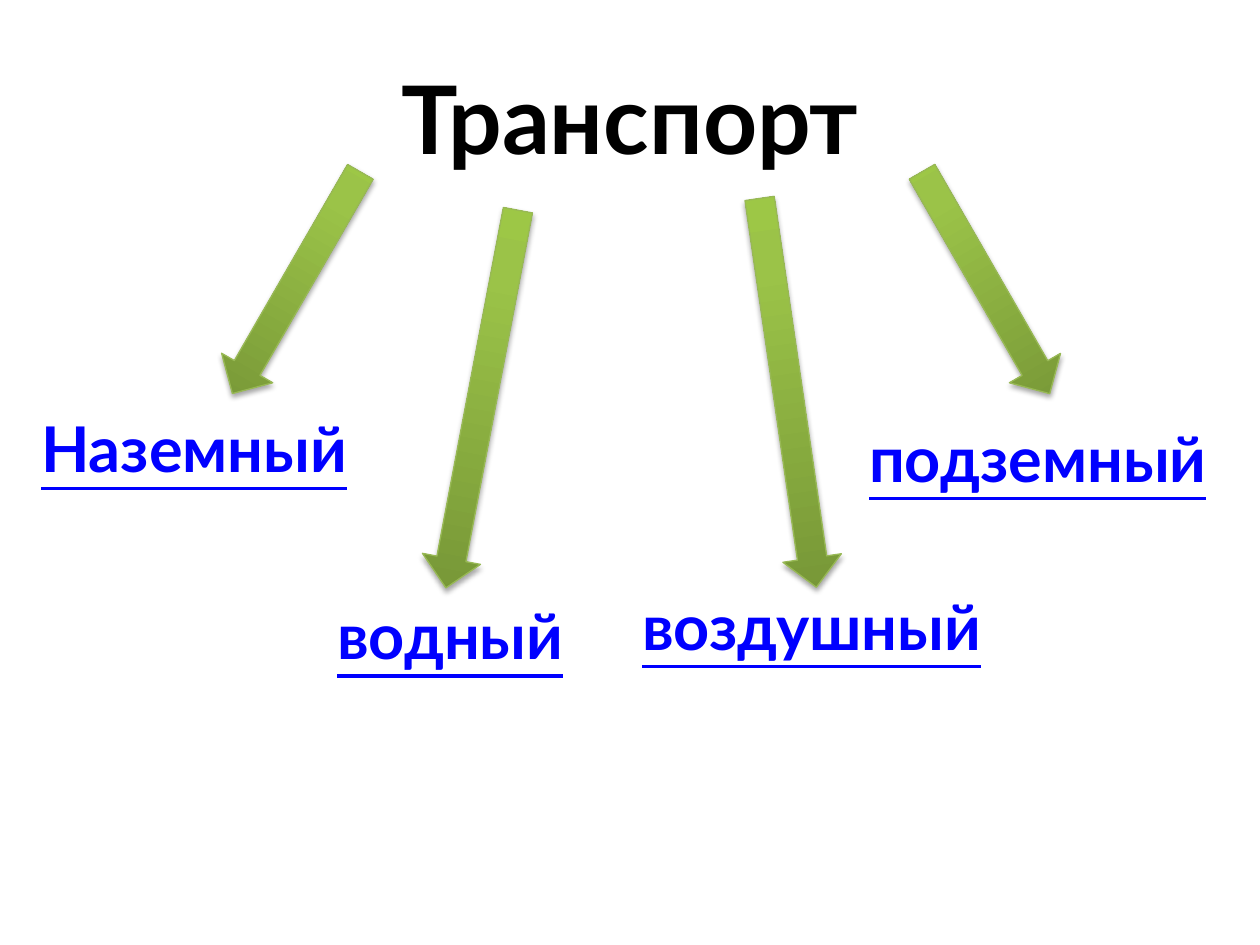
from dataclasses import dataclass

from pptx import Presentation
from pptx.dml.color import RGBColor
from pptx.enum.shapes import MSO_SHAPE
from pptx.enum.text import MSO_ANCHOR, PP_ALIGN
from pptx.oxml import parse_xml
from pptx.oxml.ns import nsdecls, qn
from pptx.util import Cm, Pt

DOWN_ARROW = MSO_SHAPE.DOWN_ARROW
MIDDLE, TOP = MSO_ANCHOR.MIDDLE, MSO_ANCHOR.TOP
CENTER, LEFT = PP_ALIGN.CENTER, PP_ALIGN.LEFT

FONT = "Lato"
BLACK = RGBColor(0x00, 0x00, 0x00)
BLUE = RGBColor(0x00, 0x00, 0xFF)
EDGE_GREEN = RGBColor(0x98, 0xB9, 0x55)
DARK_GREEN = RGBColor(0x77, 0x97, 0x37)
MID_GREEN = RGBColor(0x9B, 0xC3, 0x48)
LIGHT_GREEN = RGBColor(0x9D, 0xC7, 0x46)
GREEN_STOPS = ((0, DARK_GREEN), (80, MID_GREEN), (100, LIGHT_GREEN))

LABEL_HEIGHT = 1.8
ARROW_WIDTH = 1.19


@dataclass
class Label:
    """Text with its box in centimetres."""
    text: str
    left: float
    top: float
    width: float
    height: float = LABEL_HEIGHT
    size: int = 36
    color: RGBColor = BLUE
    underline: bool = True
    align: PP_ALIGN = LEFT
    anchor: MSO_ANCHOR = TOP


@dataclass
class Arrow:
    """Unrotated place in centimetres, rotation in degrees."""
    left: float
    top: float
    length: float
    rotation: float


TITLE = Label("Транспорт", 1.27, 0.76, 22.86, 3.18, 54, BLACK, False, CENTER, MIDDLE)
KINDS = (
    Label("Наземный", 0.58, 8.13, 7.54),
    Label("воздушный", 12.7, 11.71, 8.13),
    Label("подземный", 17.27, 8.33, 8.13),
    Label("водный", 6.55, 11.91, 5.56),
)
ARROWS = (
    Arrow(5.38, 3.12, 5.16, 30),
    Arrow(15.29, 3.96, 7.92, 351.7),
    Arrow(19.28, 3.12, 5.16, 330.1),
    Arrow(9.12, 4.17, 7.75, 10.8),
)


def add_label(page, label: Label) -> None:
    box = page.shapes.add_textbox(
        Cm(label.left), Cm(label.top), Cm(label.width), Cm(label.height))
    frame = box.text_frame
    frame.word_wrap = True
    frame.vertical_anchor = label.anchor
    para = frame.paragraphs[0]
    para.alignment = label.align
    span = para.add_run()
    span.text = label.text
    font = span.font
    font.name, font.size, font.bold = FONT, Pt(label.size), True
    font.underline = label.underline
    font.color.rgb = label.color


def add_arrow(page, arrow: Arrow) -> None:
    shape = page.shapes.add_shape(
        DOWN_ARROW, Cm(arrow.left), Cm(arrow.top), Cm(ARROW_WIDTH), Cm(arrow.length))
    shape.rotation = arrow.rotation
    shape.line.color.rgb = EDGE_GREEN
    shape.line.width = Pt(0.75)

    # Three-stop gradient, dark at the tip
    shape.fill.gradient()
    shape.fill.gradient_angle = 90
    properties = shape.element.spPr
    stops = properties.find(qn("a:gradFill")).find(qn("a:gsLst"))
    for stop in list(stops):
        stops.remove(stop)
    for percent, color in GREEN_STOPS:
        stops.append(parse_xml(
            f'<a:gs {nsdecls("a")} pos="{percent * 1000}">'
            f'<a:srgbClr val="{color}"/></a:gs>'))

    # Soft shadow straight below
    shape.shadow.inherit = False
    properties.find(qn("a:effectLst")).append(parse_xml(
        f'<a:outerShdw {nsdecls("a")} blurRad="{Pt(3.1)}" dist="{Pt(1.8)}" '
        'dir="5400000" rotWithShape="0"><a:srgbClr val="000000">'
        '<a:alpha val="35000"/></a:srgbClr></a:outerShdw>'))


def main() -> None:
    deck = Presentation()
    deck.slide_width, deck.slide_height = Cm(25.4), Cm(19.05)
    page = deck.slides.add_slide(deck.slide_layouts[6])

    # Title and the kinds of transport
    for label in (TITLE, *KINDS):
        add_label(page, label)

    # Arrows from the title to each kind
    for arrow in ARROWS:
        add_arrow(page, arrow)

    deck.save("out.pptx")


if __name__ == "__main__":
    main()
